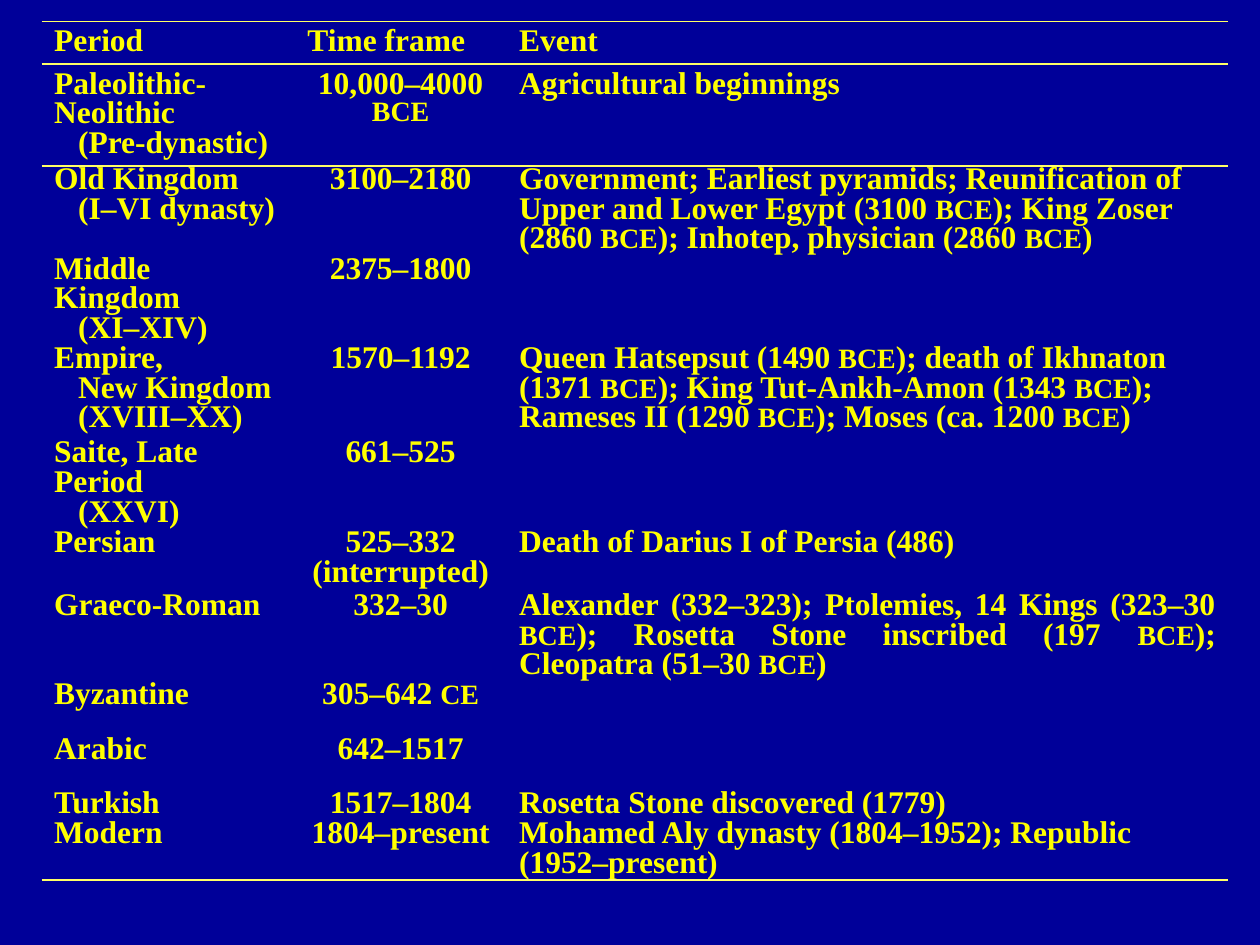
from lxml import etree
from pptx import Presentation
from pptx.dml.color import RGBColor
from pptx.enum.text import PP_ALIGN
from pptx.oxml.ns import qn
from pptx.util import Inches, Pt

LEFT, CENTER, JUSTIFY = PP_ALIGN.LEFT, PP_ALIGN.CENTER, PP_ALIGN.JUSTIFY

NAVY = RGBColor(0x00, 0x00, 0x99)
YELLOW = RGBColor(0xFF, 0xFF, 0x00)
RULE_YELLOW = RGBColor(0xFF, 0xFF, 0x66)
FONT = "Times New Roman"
TEXT_SIZE, ERA_SIZE = Pt(18), Pt(16)
LINE_SPACING = 0.85
DYNASTY_INDENT = Inches(0.19)
NO_GRID_STYLE = "{2D5ABB26-0587-4C30-8999-92F81FD0307C}"

COLUMN_WIDTHS = [2.01, 1.68, 5.73]
ROW_HEIGHTS = [0.34, 0.8, 0.71, 0.71, 0.75, 0.71, 0.5, 0.71, 0.43, 0.43, 0.24, 0.48]
JUSTIFIED_ROWS = (1, 7)

# Text between bars is an era mark in the smaller size.
TIMELINE = [
    (["Period"], ["Time frame"], "Event"),
    (["Paleolithic-Neolithic", "(Pre-dynastic)"], ["10,000–4000 |BCE|"],
     "Agricultural beginnings"),
    (["Old Kingdom", "(I–VI dynasty)"], ["3100–2180"],
     "Government; Earliest pyramids; Reunification of Upper and Lower Egypt "
     "(3100 |BCE|); King Zoser (2860 |BCE|); Inhotep, physician (2860 |BCE|)"),
    (["Middle Kingdom", "(XI–XIV)"], ["2375–1800"], ""),
    (["Empire,", "New Kingdom", "(XVIII–XX)"], ["1570–1192"],
     "Queen Hatsepsut (1490 |BCE|); death of Ikhnaton (1371 |BCE|); "
     "King Tut-Ankh-Amon (1343 |BCE|); Rameses II (1290 |BCE|); "
     "Moses (ca. 1200 |BCE|)"),
    (["Saite, Late Period", "(XXVI)"], ["661–525"], ""),
    (["Persian"], ["525–332", "(interrupted)"], "Death of Darius I of Persia (486)"),
    (["Graeco-Roman"], ["332–30"],
     "Alexander (332–323); Ptolemies, 14 Kings (323–30 |BCE|); Rosetta Stone "
     "inscribed (197 |BCE|); Cleopatra (51–30 |BCE|)"),
    (["Byzantine"], ["305–642 |CE|"], ""),
    (["Arabic"], ["642–1517"], ""),
    (["Turkish"], ["1517–1804"], "Rosetta Stone discovered (1779)"),
    (["Modern"], ["1804–present"],
     "Mohamed Aly dynasty (1804–1952); Republic (1952–present)"),
]


def style_font(font, size):
    font.name = FONT
    font.size = size
    font.bold = True
    font.color.rgb = YELLOW


def write_cell(cell, lines, alignment, indent_rest):
    frame = cell.text_frame
    frame.text = "\n".join(lines)
    for number, (para, line) in enumerate(zip(frame.paragraphs, lines)):
        para.alignment = alignment
        para.line_spacing = LINE_SPACING
        if indent_rest and number:
            para._p.get_or_add_pPr().set("marL", str(DYNASTY_INDENT))
        if not line:
            style_font(para.font, TEXT_SIZE)
            continue
        para.clear()
        for position, words in enumerate(line.split("|")):
            if words:
                span = para.add_run()
                span.text = words
                style_font(span.font, ERA_SIZE if position % 2 else TEXT_SIZE)


def add_rules(cell, sides):
    properties = cell._tc.get_or_add_tcPr()
    for position, side in enumerate(sides):
        line = etree.Element(qn("a:ln" + side), w=str(Pt(1)))
        fill = etree.SubElement(line, qn("a:solidFill"))
        etree.SubElement(fill, qn("a:srgbClr"), val=str(RULE_YELLOW))
        properties.insert(position, line)


def add_timeline(page, left, top, width, height):
    table = page.shapes.add_table(
        len(TIMELINE), len(COLUMN_WIDTHS), left, top, width, height).table
    table.first_row = table.horz_banding = False
    table._tbl.tblPr.find(qn("a:tableStyleId")).text = NO_GRID_STYLE
    for column, column_width in zip(table.columns, COLUMN_WIDTHS):
        column.width = Inches(column_width)
    for row, row_height in zip(table.rows, ROW_HEIGHTS):
        row.height = Inches(row_height)

    rules = {0: "TB", 1: "T", len(TIMELINE) - 1: "B"}
    for row_number, (period, years, event) in enumerate(TIMELINE):
        alignments = (LEFT, CENTER if row_number else LEFT,
                      JUSTIFY if row_number in JUSTIFIED_ROWS else LEFT)
        for column_number, lines in enumerate((period, years, [event])):
            cell = table.cell(row_number, column_number)
            cell.fill.background()
            cell.margin_left = cell.margin_right = Inches(0.1)
            cell.margin_top = cell.margin_bottom = Inches(0.05 if row_number < 2 else 0)
            write_cell(cell, lines, alignments[column_number], column_number == 0)
            add_rules(cell, rules.get(row_number, ""))


def main():
    deck = Presentation()
    deck.slide_width, deck.slide_height = Inches(10), Inches(7.5)
    page = deck.slides.add_slide(deck.slide_layouts[6])
    page.background.fill.solid()
    page.background.fill.fore_color.rgb = NAVY
    add_timeline(page, Inches(0.33), Inches(0.17),
                 Inches(sum(COLUMN_WIDTHS)), Inches(sum(ROW_HEIGHTS)))
    deck.save("out.pptx")


if __name__ == "__main__":
    main()
